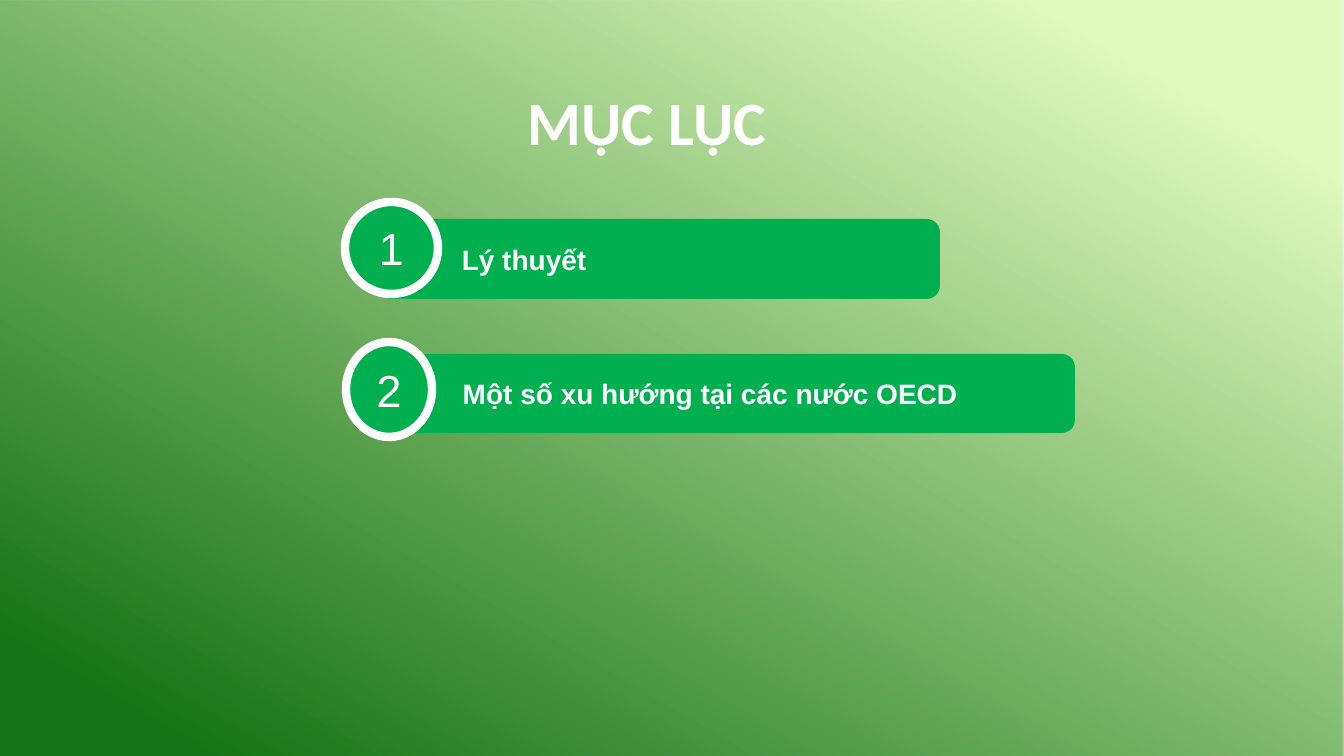
from pptx import Presentation
from pptx.dml.color import RGBColor
from pptx.enum.shapes import MSO_SHAPE
from pptx.enum.text import MSO_ANCHOR, PP_ALIGN
from pptx.oxml.ns import qn
from pptx.util import Emu, Pt
from lxml.etree import SubElement

SLIDE_WIDTH, SLIDE_HEIGHT = 1344, 756
EMU_PER_PX = 12192000 / SLIDE_WIDTH
GREEN, WHITE = "00B050", "FFFFFF"
GRADIENT_STOPS = [(0.12, "DDF9B8"), (0.92, "006600")]
TEXT_INDENT = 70

# number, topic, bar box, badge box (left, top, width, height)
CONTENTS = [
    ("1", "Lý thuyết", (378, 219, 562, 80), (345, 202, 93, 92)),
    ("2", "Một số xu hướng tại các nước OECD", (379, 354, 696, 79), (346, 342, 86, 95)),
]


def px(length):
    return Emu(round(length * EMU_PER_PX))


def color(hex_code):
    return RGBColor.from_string(hex_code)


def write(shape, text, size, font_name="Arial", bold=False, align=PP_ALIGN.LEFT):
    """Put one white line of text in the shape and return its paragraph."""
    shape.text_frame.word_wrap = True
    shape.text_frame.text = text
    paragraph = shape.text_frame.paragraphs[0]
    paragraph.alignment = align
    font = paragraph.runs[0].font
    font.name, font.size, font.bold = font_name, Pt(size), bold
    font.color.rgb = color(WHITE)
    return paragraph


def add_plain_shape(slide, kind, box):
    shape = slide.shapes.add_shape(kind, *map(px, box))
    shape.shadow.inherit = False
    shape.line.fill.background()
    shape.text_frame.vertical_anchor = MSO_ANCHOR.MIDDLE
    return shape


def add_backdrop(slide):
    """Cover the slide with a slightly transparent diagonal gradient."""
    backdrop = add_plain_shape(slide, MSO_SHAPE.RECTANGLE, (0, 0, SLIDE_WIDTH, SLIDE_HEIGHT))
    backdrop.fill.gradient()
    backdrop.fill.gradient_angle = 240
    for stop, (position, hex_code) in zip(backdrop.fill.gradient_stops, GRADIENT_STOPS):
        stop.position = position
        stop.color.rgb = color(hex_code)
    for stop_color in backdrop.element.spPr.iter(qn("a:srgbClr")):
        SubElement(stop_color, qn("a:alpha"), val="90000")


def add_title(slide, text):
    title = slide.shapes.add_textbox(px(404), px(87), px(486), px(65))
    paragraph = write(title, text, 44, "Calibri", bold=True, align=PP_ALIGN.CENTER)
    paragraph.line_spacing = 0.9


def add_topic_bar(slide, text, box):
    bar = add_plain_shape(slide, MSO_SHAPE.FLOWCHART_ALTERNATE_PROCESS, box)
    bar.fill.solid()
    bar.fill.fore_color.rgb = color(GREEN)
    paragraph = write(bar, text, 20, bold=True)
    paragraph_properties = paragraph._p.get_or_add_pPr()
    paragraph_properties.set("marL", "0")
    paragraph_properties.set("indent", str(px(TEXT_INDENT)))


def add_number_badge(slide, number, box):
    badge = add_plain_shape(slide, MSO_SHAPE.OVAL, box)
    badge.fill.solid()
    badge.fill.fore_color.rgb = color(GREEN)
    badge.line.color.rgb = color(WHITE)
    badge.line.width = Pt(6)
    write(badge, number, 32, align=PP_ALIGN.CENTER)


def main():
    presentation = Presentation()
    presentation.slide_width = px(SLIDE_WIDTH)
    presentation.slide_height = px(SLIDE_HEIGHT)
    slide = presentation.slides.add_slide(presentation.slide_layouts[6])
    add_backdrop(slide)
    for number, topic, bar_box, badge_box in CONTENTS:
        add_topic_bar(slide, topic, bar_box)
        add_number_badge(slide, number, badge_box)
    add_title(slide, "MỤC LỤC")
    presentation.save("out.pptx")


if __name__ == "__main__":
    main()
